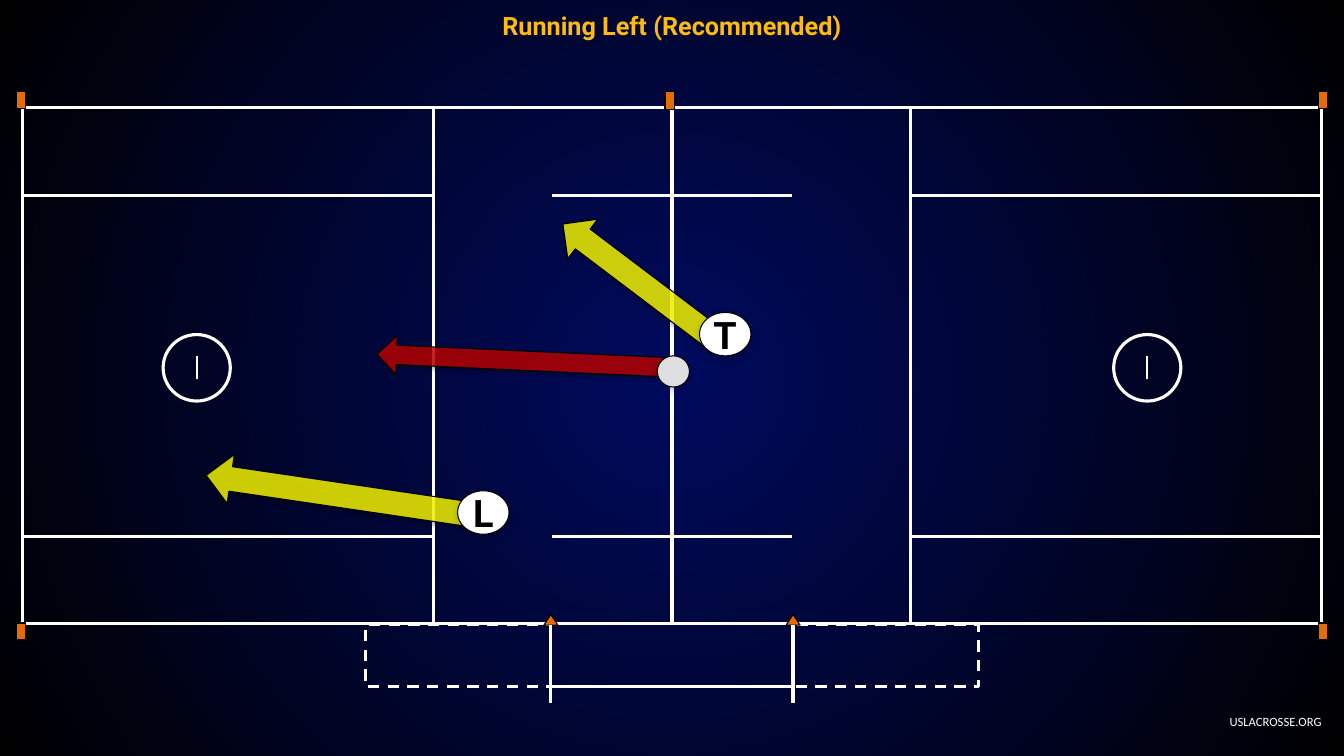
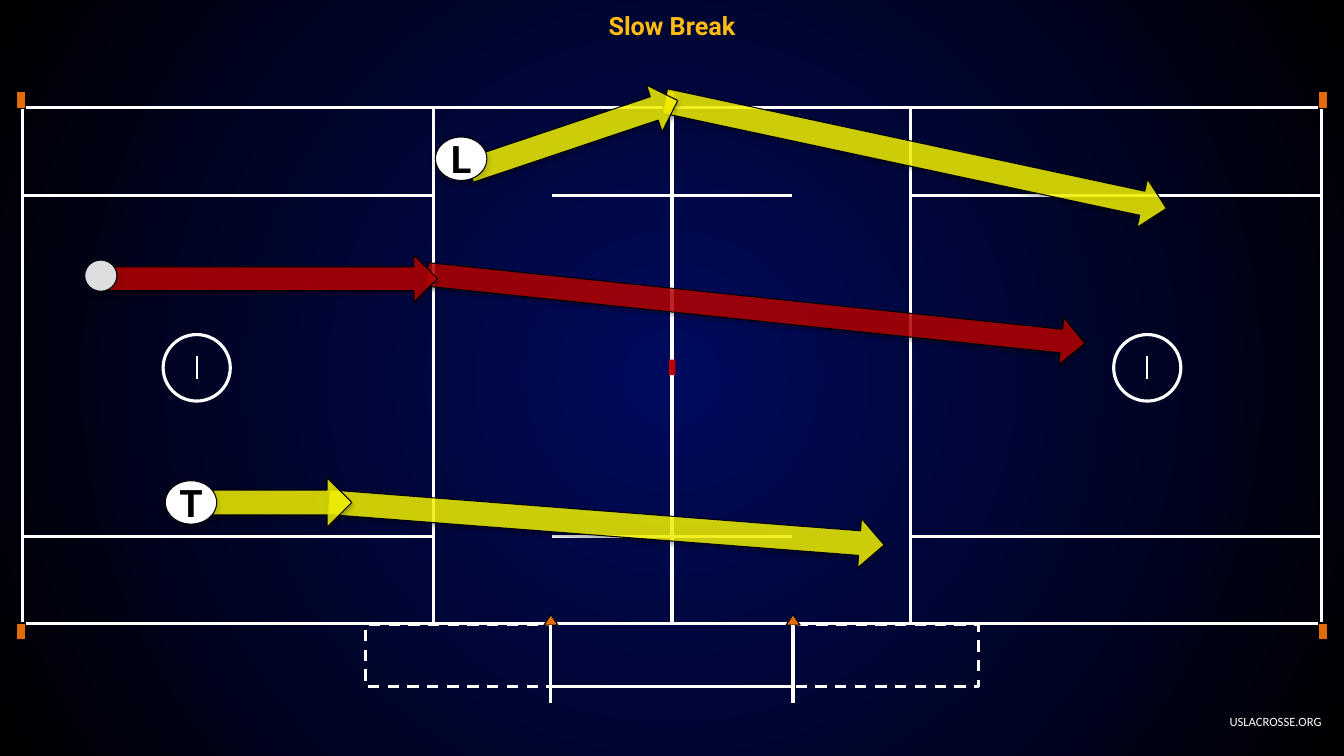
from math import atan2, degrees, hypot

from lxml import etree
from pptx import Presentation
from pptx.dml.color import RGBColor
from pptx.enum.dml import MSO_LINE
from pptx.enum.shapes import MSO_CONNECTOR, MSO_SHAPE
from pptx.enum.text import MSO_ANCHOR, PP_ALIGN
from pptx.oxml.ns import qn
from pptx.util import Pt

RECT, OVAL = MSO_SHAPE.RECTANGLE, MSO_SHAPE.OVAL
TRIANGLE, ARROW = MSO_SHAPE.ISOSCELES_TRIANGLE, MSO_SHAPE.RIGHT_ARROW
STRAIGHT, DASH = MSO_CONNECTOR.STRAIGHT, MSO_LINE.DASH
CENTER, RIGHT = PP_ALIGN.CENTER, PP_ALIGN.RIGHT
MIDDLE = MSO_ANCHOR.MIDDLE

NAVY = RGBColor(0x00, 0x0A, 0x5E)
BLACK = RGBColor(0x00, 0x00, 0x00)
WHITE = RGBColor(0xFF, 0xFF, 0xFF)
GOLD = RGBColor(0xFE, 0xBC, 0x11)
ORANGE = RGBColor(0xE3, 0x6C, 0x09)
RED = RGBColor(0xC0, 0x00, 0x00)
YELLOW = RGBColor(0xFF, 0xFF, 0x00)
GRAY = RGBColor(0xDC, 0xDE, 0xE0)

SLIDE_W, SLIDE_H = 960, 540
FIELD = (16, 76.5, 928, 369)
TITLE_BOX = (0, 3.5, SLIDE_W, 30)
FOOTER_BOX = (869.5, 506, 81.5, 18)
PLAYER_SIZE = (36.7, 31)
BALL_SIZE = (23, 22.3)
ARROW_SHADOW = (35, 3.1, 1.8)
MARKER_SHADOW = (20, 5, 2)

# Arrows: colour, thickness, tail, tip. Players: letter, centre.
PLAYS = [
    {
        "title": "Running Left (Recommended)",
        "arrows": [
            (RED, 27.4, (485.2, 262.7), (269.4, 252.9)),
            (YELLOW, 35.3, (507.3, 239.6), (402.1, 160)),
            (YELLOW, 35.3, (342.3, 368.3), (147.3, 339.5)),
        ],
        "players": [("L", (345.2, 366.1)), ("T", (518, 238.7))],
        "ball": (481, 265.3),
    },
    {
        "title": "Slow Break",
        "arrows": [
            (YELLOW, 35.3, (234.6, 358.7), (631.6, 389.3)),
            (YELLOW, 35.3, (475, 72.1), (833.2, 148.9)),
            (RED, 33.8, (305.1, 196), (774.9, 245.4)),
            (RED, 33.8, (72, 199.1), (312.5, 199.1)),
            (YELLOW, 35.3, (132.5, 358.9), (251.3, 358.9)),
            (YELLOW, 35.3, (335.3, 121.8), (484.1, 71.8)),
        ],
        "players": [("T", (136.4, 358.9)), ("L", (329.4, 113.4))],
        "ball": (72, 196.9),
    },
]


def add_figure(slide, kind, box, fill=None, line=None, weight=0.75):
    figure = slide.shapes.add_shape(kind, *map(Pt, box))
    figure.shadow.inherit = False
    if fill is None:
        figure.fill.background()
    else:
        figure.fill.solid()
        figure.fill.fore_color.rgb = fill
    if line is None:
        figure.line.fill.background()
    else:
        figure.line.color.rgb = line
        figure.line.width = Pt(weight)
    return figure


def add_line(slide, start, end, weight=2.25):
    line = slide.shapes.add_connector(STRAIGHT, *map(Pt, (*start, *end)))
    line.line.color.rgb = WHITE
    line.line.width = Pt(weight)
    etree.SubElement(line.element.spPr, qn("a:effectLst"))


def set_alpha(color_element, percent):
    etree.SubElement(color_element, qn("a:alpha"), val=str(percent * 1000))


def drop_shadow(figure, opacity, blur, distance):
    """Cast a black shadow straight down."""
    effects = figure.element.spPr.find(qn("a:effectLst"))
    shadow = etree.SubElement(
        effects, qn("a:outerShdw"), blurRad=str(int(Pt(blur))),
        dist=str(int(Pt(distance))), dir="5400000", rotWithShape="0")
    color = etree.SubElement(shadow, qn("a:srgbClr"), val=str(BLACK))
    set_alpha(color, opacity)


def write(frame, text, font, size, color, align, bold=False):
    frame.vertical_anchor = MIDDLE
    paragraph = frame.paragraphs[0]
    paragraph.text = text
    paragraph.alignment = align
    paragraph.font.name = font
    paragraph.font.size = Pt(size)
    paragraph.font.bold = bold
    paragraph.font.color.rgb = color


def add_text(slide, box, *style, **options):
    frame = slide.shapes.add_textbox(*map(Pt, box)).text_frame
    frame.word_wrap = True
    write(frame, *style, **options)


def paint_background(slide):
    fill = slide.background.fill
    fill.gradient()
    for stop, color, position in zip(fill.gradient_stops, (NAVY, BLACK), (0, 1)):
        stop.color.rgb = color
        stop.position = position
    gradient = slide.element.find(".//" + qn("a:gradFill"))
    for linear in gradient.findall(qn("a:lin")):
        gradient.remove(linear)
    circle = etree.SubElement(gradient, qn("a:path"), path="circle")
    etree.SubElement(circle, qn("a:fillToRect"),
                     l="50000", t="50000", r="50000", b="50000")


def draw_half(slide, box, side):
    """Draw the left (side -1) or right (side 1) half, measured from midfield."""
    left, top, width, height = box
    middle, goal_line = left + width / 2, width / 2
    restraining, goal, gate = 170.5, 339.5, 86.5
    alley_top, alley_bottom = 63, height - 62.5
    bench_top, bench_bottom = height + 1, height + 45

    def zone(near, far, y0, y1):
        edge = middle + (near if side > 0 else -far)
        return edge, top + y0, far - near, y1 - y0

    def point(distance, y):
        return middle + side * distance, top + y

    rows = (0, alley_top, alley_bottom, height)
    zones = [(0, restraining, 0, height)]
    zones += [(restraining, goal_line, y0, y1) for y0, y1 in zip(rows, rows[1:])]
    for area in zones:
        add_figure(slide, RECT, zone(*area), line=WHITE, weight=2.25)
    for y in (-11, height - 0.5):
        add_figure(slide, RECT, zone(462, 468.5, y, y + 12), ORANGE, BLACK)

    bench = add_figure(slide, RECT, zone(gate, 219, bench_top, bench_bottom),
                       line=WHITE, weight=2)
    bench.line.dash_style = DASH
    add_figure(slide, TRIANGLE, zone(gate - 5, gate + 5, height - 6.5, bench_top),
               ORANGE, BLACK)
    add_line(slide, point(gate, height + 56.5), point(gate, bench_top))

    add_figure(slide, OVAL, zone(goal - 24, goal + 24, 162.5, 210),
               line=WHITE, weight=2.25)
    add_line(slide, point(goal, 194.5), point(goal, 177.5), 1.5)
    for y in (alley_top, alley_bottom, bench_bottom):
        add_line(slide, point(0, y), point(gate - 1, y))


def draw_field(slide, box):
    left, top, width, _ = box
    middle = left + width / 2
    for side in (-1, 1):
        draw_half(slide, box, side)
    add_figure(slide, RECT, (middle - 5, top - 11, 7, 13), ORANGE, BLACK)
    add_figure(slide, RECT, (middle - 2, top + 180.5, 4.5, 11), RED)


def add_arrow(slide, color, thickness, tail, tip):
    dx, dy = tip[0] - tail[0], tip[1] - tail[1]
    length = hypot(dx, dy)
    box = ((tail[0] + tip[0] - length) / 2, (tail[1] + tip[1] - thickness) / 2,
           length, thickness)
    arrow = add_figure(slide, ARROW, box, color, BLACK)
    arrow.rotation = degrees(atan2(dy, dx)) % 360
    set_alpha(arrow.element.spPr.find(qn("a:solidFill"))[0], 80)
    drop_shadow(arrow, *ARROW_SHADOW)


def add_marker(slide, center, size, fill):
    box = (center[0] - size[0] / 2, center[1] - size[1] / 2, *size)
    marker = add_figure(slide, OVAL, box, fill, BLACK)
    drop_shadow(marker, *MARKER_SHADOW)
    return marker


def add_player(slide, letter, center):
    frame = add_marker(slide, center, PLAYER_SIZE, WHITE).text_frame
    frame.margin_left = frame.margin_right = Pt(5)
    frame.margin_top = frame.margin_bottom = Pt(5)
    frame.word_wrap = False
    write(frame, letter, "Roboto", 27, BLACK, CENTER, bold=True)


def add_play(deck, play):
    slide = deck.slides.add_slide(deck.slide_layouts[6])
    paint_background(slide)
    add_text(slide, FOOTER_BOX, "USLACROSSE.ORG", "Calibri", 9, WHITE, RIGHT)
    draw_field(slide, FIELD)
    add_text(slide, TITLE_BOX, play["title"], "Roboto", 18, GOLD, CENTER, bold=True)
    for arrow in play["arrows"]:
        add_arrow(slide, *arrow)
    for player in play["players"]:
        add_player(slide, *player)
    add_marker(slide, play["ball"], BALL_SIZE, GRAY)


def main():
    deck = Presentation()
    deck.slide_width, deck.slide_height = Pt(SLIDE_W), Pt(SLIDE_H)
    for play in PLAYS:
        add_play(deck, play)
    deck.save("out.pptx")


if __name__ == "__main__":
    main()
